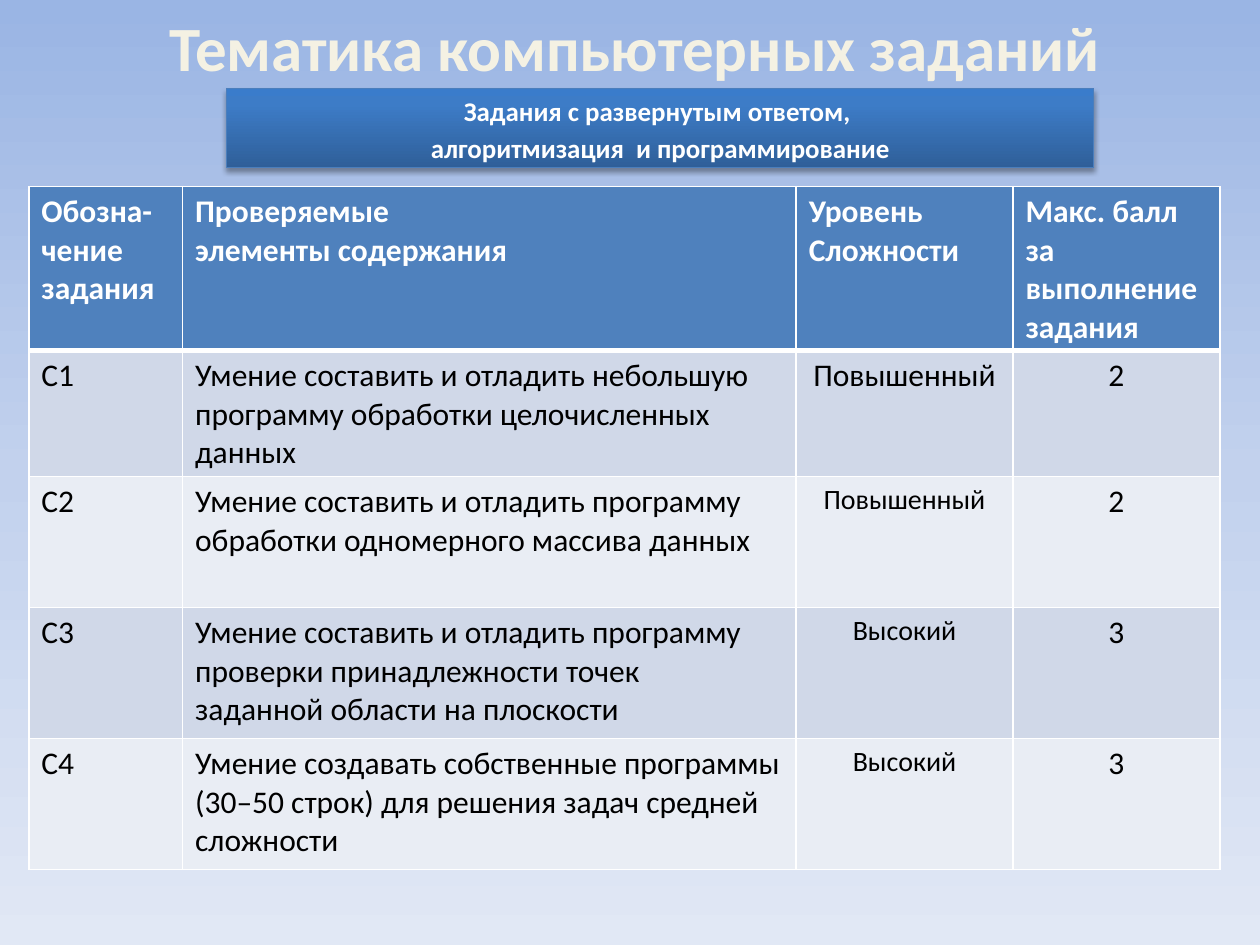
from lxml import etree
from pptx import Presentation
from pptx.dml.color import RGBColor
from pptx.enum.shapes import MSO_SHAPE
from pptx.enum.text import MSO_ANCHOR, PP_ALIGN
from pptx.oxml import parse_xml
from pptx.oxml.ns import nsdecls, qn
from pptx.util import Cm, Pt

RECTANGLE = MSO_SHAPE.RECTANGLE
TOP = MSO_ANCHOR.TOP
LEFT, CENTER = PP_ALIGN.LEFT, PP_ALIGN.CENTER

THEME = {
    "font": "Calibri",
    "title": "F4F1E3", "light": "FFFFFF", "dark": "000000",
    "header": "4F81BD", "bands": ("D0D8E8", "E9EDF4"), "outline": "4B7EBC",
    "page_stops": ((0, "9AB5E4"), (50, "C2D1ED"), (100, "E1E8F5")),
    "banner_stops": ((0, "2F5F99"), (80, "3D7CC7"), (100, "3A7CCB")),
    "title_size": 36, "banner_size": 15.4, "table_size": 18, "level_size": 16,
}

TITLE = "Тематика компьютерных заданий"
BANNER = "Задания с развернутым ответом, \nалгоритмизация  и программирование"
HEADER = (
    "Обозна-чение\nзадания",
    "Проверяемые\nэлементы содержания",
    "Уровень\nСложности",
    "Макс. балл за выполнение задания",
)
TASKS = (
    ("С1", "Умение составить и отладить небольшую программу обработки "
           "целочисленных\nданных", "Повышенный", "2"),
    ("С2", "Умение составить и отладить программу обработки одномерного "
           "массива данных", "Повышенный", "2"),
    ("С3", "Умение составить и отладить программу проверки принадлежности "
           "точек\nзаданной области на плоскости", "Высокий", "3"),
    ("С4", "Умение создавать собственные программы (30–50 строк) для решения "
           "задач средней сложности", "Высокий", "3"),
)
COLUMN_WIDTHS = (3.1, 12.37, 4.37, 4.17)
ROW_HEIGHTS = (2.97, 1.85, 2.64, 2.64, 2.64)


def place(left, top, width, height):
    """Return a position and size given in centimetres."""
    return Cm(left), Cm(top), Cm(width), Cm(height)


def write(frame, text, size, color, bold=False, align=LEFT):
    """Set the text of a frame and format every paragraph."""
    frame.word_wrap = True
    frame.text = text
    for para in frame.paragraphs:
        para.alignment = align
        for span in para.runs:
            span.font.name = THEME["font"]
            span.font.size = Pt(size)
            span.font.bold = bold
            span.font.color.rgb = RGBColor.from_string(color)


def fill_gradient(fill, element, stops, angle):
    """Fill with a linear gradient; the angle runs counter-clockwise."""
    fill.gradient()
    fill.gradient_angle = angle
    stop_list = element.find(".//" + qn("a:gsLst"))
    stop_list.clear()
    for percent, color in stops:
        stop = etree.SubElement(stop_list, qn("a:gs"), pos=str(percent * 1000))
        etree.SubElement(stop, qn("a:srgbClr"), val=color)


def add_borders(cell, bottom):
    """Draw white borders around a cell, with its own bottom width."""
    properties = cell._tc.get_or_add_tcPr()
    widths = {"L": 1, "R": 1, "T": 1, "B": bottom}
    for index, (side, width) in enumerate(widths.items()):
        properties.insert(index, parse_xml(
            f'<a:ln{side} {nsdecls("a")} w="{Pt(width)}"><a:solidFill>'
            f'<a:srgbClr val="{THEME["light"]}"/></a:solidFill></a:ln{side}>'))


def add_title(page):
    """Add the slide title."""
    box = page.shapes.add_textbox(*place(0.99, 0.41, 23.62, 1.47))
    write(box.text_frame, TITLE, THEME["title_size"], THEME["title"], True, CENTER)
    box.text_frame.paragraphs[0].line_spacing = Pt(33.2)


def add_banner(page):
    """Add the shaded banner under the title."""
    box = page.shapes.add_shape(RECTANGLE, *place(4.57, 1.78, 17.48, 1.6))
    fill_gradient(box.fill, box._element.spPr, THEME["banner_stops"], 90)
    box.line.color.rgb = RGBColor.from_string(THEME["outline"])
    box.line.width = Pt(0.75)
    box.shadow.inherit = False
    box._element.spPr.find(qn("a:effectLst")).append(parse_xml(
        f'<a:outerShdw {nsdecls("a")} blurRad="{Pt(3.1)}" dist="{Pt(1.8)}" '
        'dir="5400000" rotWithShape="0"><a:srgbClr val="000000">'
        '<a:alpha val="35000"/></a:srgbClr></a:outerShdw>'))
    box.text_frame.vertical_anchor = TOP
    write(box.text_frame, BANNER, THEME["banner_size"], THEME["light"], True, CENTER)
    for para in box.text_frame.paragraphs:
        para.space_before = Pt(3)


def add_task_table(page):
    """Add the table of tasks."""
    rows = (HEADER,) + TASKS
    area = place(0.58, 3.76, sum(COLUMN_WIDTHS), sum(ROW_HEIGHTS))
    table = page.shapes.add_table(len(rows), len(HEADER), *area).table
    for column, width in zip(table.columns, COLUMN_WIDTHS):
        column.width = Cm(width)
    for row, height in zip(table.rows, ROW_HEIGHTS):
        row.height = Cm(height)
    for r, texts in enumerate(rows):
        is_header = r == 0
        band = THEME["header"] if is_header else THEME["bands"][(r - 1) % 2]
        color = THEME["light"] if is_header else THEME["dark"]
        for c, text in enumerate(texts):
            cell = table.cell(r, c)
            cell.fill.solid()
            cell.fill.fore_color.rgb = RGBColor.from_string(band)
            add_borders(cell, 3 if is_header else 1)
            size = THEME["level_size" if r > 1 and c == 2 else "table_size"]
            align = CENTER if c > 1 and not is_header else LEFT
            write(cell.text_frame, text, size, color, is_header, align)


def main():
    """Build the slide and save the deck."""
    deck = Presentation()
    deck.slide_width, deck.slide_height = Cm(25.4), Cm(19.05)
    page = deck.slides.add_slide(deck.slide_layouts[6])
    fill_gradient(page.background.fill, page.element, THEME["page_stops"], 270)
    add_title(page)
    add_task_table(page)
    add_banner(page)
    deck.save("out.pptx")


if __name__ == "__main__":
    main()
